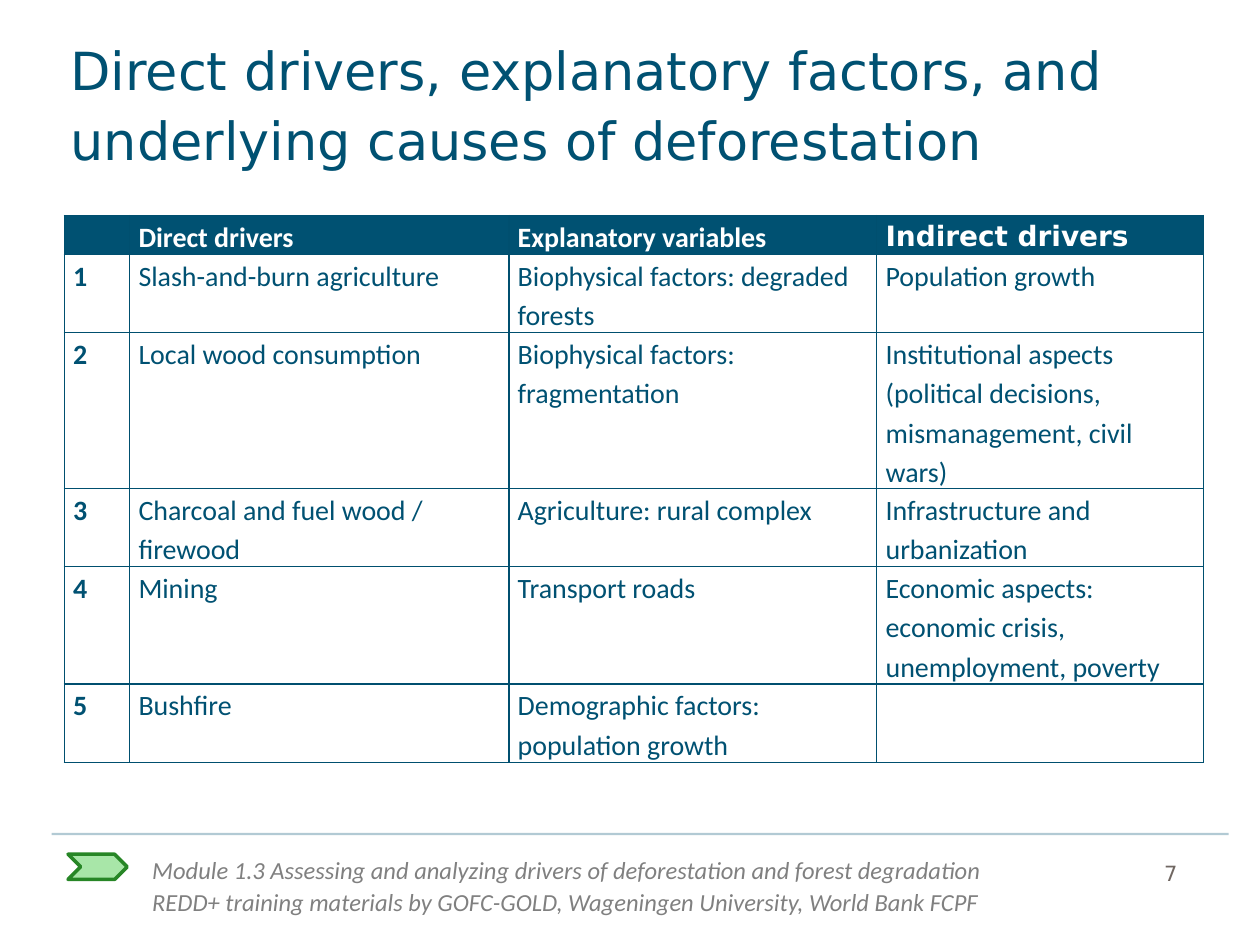
from dataclasses import dataclass

from lxml.etree import SubElement
from pptx import Presentation
from pptx.dml.color import RGBColor
from pptx.enum.shapes import MSO_CONNECTOR, MSO_SHAPE
from pptx.enum.text import MSO_ANCHOR, PP_ALIGN
from pptx.oxml.ns import qn
from pptx.util import Inches, Pt

TITLE = "Direct drivers, explanatory factors, and underlying causes of deforestation"
HEADER = ["", "Direct drivers", "Explanatory variables", "Indirect drivers"]
# Each row: lines of text it holds, then its cells
DRIVERS = [
    (2, ["Slash-and-burn agriculture", "Biophysical factors: degraded forests",
         "Population growth"]),
    (4, ["Local wood consumption", "Biophysical factors: fragmentation",
         "Institutional aspects (political decisions, mismanagement, civil wars)"]),
    (2, ["Charcoal and fuel wood / firewood", "Agriculture: rural complex",
         "Infrastructure and urbanization"]),
    (3, ["Mining", "Transport roads",
         "Economic aspects: economic crisis, unemployment, poverty"]),
    (2, ["Bushfire", "Demographic factors: population growth", ""]),
]
COLUMN_WIDTHS = [0.52, 3.01, 2.92, 2.59]
LINE_HEIGHT = 0.31
FOOTER = [
    "Module 1.3 Assessing and analyzing drivers of deforestation and forest degradation",
    "REDD+ training materials by GOFC-GOLD, Wageningen University, World Bank FCPF",
]
PAGE_NUMBER = "7"


@dataclass(frozen=True)
class Theme:
    ink: str = "005172"
    border: str = "004F6F"
    white: str = "FFFFFF"
    footer: str = "808080"
    number: str = "706762"
    arrow_fill: str = "A8E6A8"
    arrow_line: str = "278626"
    body_font: str = "Calibri"
    title_font: str = "DejaVu Sans"
    title_size: int = 30
    table_size: int = 16
    footer_size: int = 14
    number_size: int = 12


THEME = Theme()


def rgb(value):
    return RGBColor.from_string(value)


def style(para, name, size, color, spacing, bold=False, italic=False):
    para.line_spacing = spacing
    font = para.font
    font.name, font.size, font.bold, font.italic = name, Pt(size), bold, italic
    font.color.rgb = rgb(color)


def set_margins(target, left, top, right, bottom):
    target.margin_left, target.margin_top = Inches(left), Inches(top)
    target.margin_right, target.margin_bottom = Inches(right), Inches(bottom)


def place(shape, left, top, width, height):
    shape.left, shape.top = Inches(left), Inches(top)
    shape.width, shape.height = Inches(width), Inches(height)


def add_title(page):
    title = page.shapes.title
    place(title, 0.54, 0.25, 9.23, 1.48)
    frame = title.text_frame
    frame.text = TITLE
    frame.word_wrap = True
    frame.vertical_anchor = MSO_ANCHOR.TOP
    set_margins(frame, 0.02, 0, 0.1, 0.35)
    para = frame.paragraphs[0]
    para.alignment = PP_ALIGN.LEFT
    style(para, THEME.title_font, THEME.title_size, THEME.ink, Pt(40))


def add_borders(cell):
    """Draw the four cell borders; they must precede the fill in the XML."""
    properties = cell._tc.get_or_add_tcPr()
    for side in ("a:lnL", "a:lnR", "a:lnT", "a:lnB"):
        line = SubElement(properties, qn(side), w=str(Pt(0.75)))
        fill = SubElement(line, qn("a:solidFill"))
        SubElement(fill, qn("a:srgbClr"), val=THEME.border)


def fill_cell(cell, text, row, column):
    header = row == 0
    add_borders(cell)
    cell.fill.solid()
    cell.fill.fore_color.rgb = rgb(THEME.ink if header else THEME.white)
    set_margins(cell, 0.07, 0, 0.07, 0)
    cell.text = text
    para = cell.text_frame.paragraphs[0]
    para.alignment = PP_ALIGN.JUSTIFY if header or column == 0 else PP_ALIGN.LEFT
    last_header = header and column == len(HEADER) - 1
    style(para, THEME.title_font if last_header else THEME.body_font,
          THEME.table_size, THEME.white if header else THEME.ink, 1.15,
          bold=header or column == 0)


def add_driver_table(page):
    rows = [(1, HEADER)]
    rows += [(lines, [str(number), *cells])
             for number, (lines, cells) in enumerate(DRIVERS, 1)]
    height = LINE_HEIGHT * sum(lines for lines, _ in rows)
    table = page.shapes.add_table(
        len(rows), len(HEADER), Inches(0.51), Inches(1.71),
        Inches(sum(COLUMN_WIDTHS)), Inches(height)).table
    for column, width in zip(table.columns, COLUMN_WIDTHS):
        column.width = Inches(width)
    for row, (lines, cells) in enumerate(rows):
        table.rows[row].height = Inches(LINE_HEIGHT * lines)
        for column, text in enumerate(cells):
            fill_cell(table.cell(row, column), text, row, column)


def add_text(page, area, lines, name, size, color, italic=False):
    box = page.shapes.add_textbox(*map(Inches, area))
    frame = box.text_frame
    frame.word_wrap = True
    frame.text = "\n".join(lines)
    for para in frame.paragraphs:
        style(para, name, size, color, Pt(18), italic=italic)


def add_footer(page):
    rule = page.shapes.add_connector(
        MSO_CONNECTOR.STRAIGHT, Inches(0.41), Inches(6.62), Inches(9.75), Inches(6.62))
    rule.line.width = Pt(1.25)
    rule.line.color.rgb = rgb(THEME.ink)
    color = rule.line._ln.find(".//" + qn("a:srgbClr"))
    SubElement(color, qn("a:alpha"), val="30000")
    SubElement(rule._element.spPr, qn("a:effectLst"))

    arrow = page.shapes.add_shape(
        MSO_SHAPE.CHEVRON, Inches(0.54), Inches(6.78), Inches(0.47), Inches(0.2))
    arrow.shadow.inherit = False
    arrow.fill.solid()
    arrow.fill.fore_color.rgb = rgb(THEME.arrow_fill)
    arrow.line.color.rgb = rgb(THEME.arrow_line)
    arrow.line.width = Pt(2)

    add_text(page, (1.11, 6.72, 7.73, 0.61), FOOTER, THEME.body_font,
             THEME.footer_size, THEME.footer, italic=True)
    add_text(page, (9.14, 6.73, 0.61, 0.33), [PAGE_NUMBER], THEME.title_font,
             THEME.number_size, THEME.number)


def main():
    deck = Presentation()
    deck.slide_width, deck.slide_height = Inches(10), Inches(7.5)
    page = deck.slides.add_slide(deck.slide_layouts[5])
    add_footer(page)
    add_title(page)
    add_driver_table(page)
    deck.save("out.pptx")


if __name__ == "__main__":
    main()
